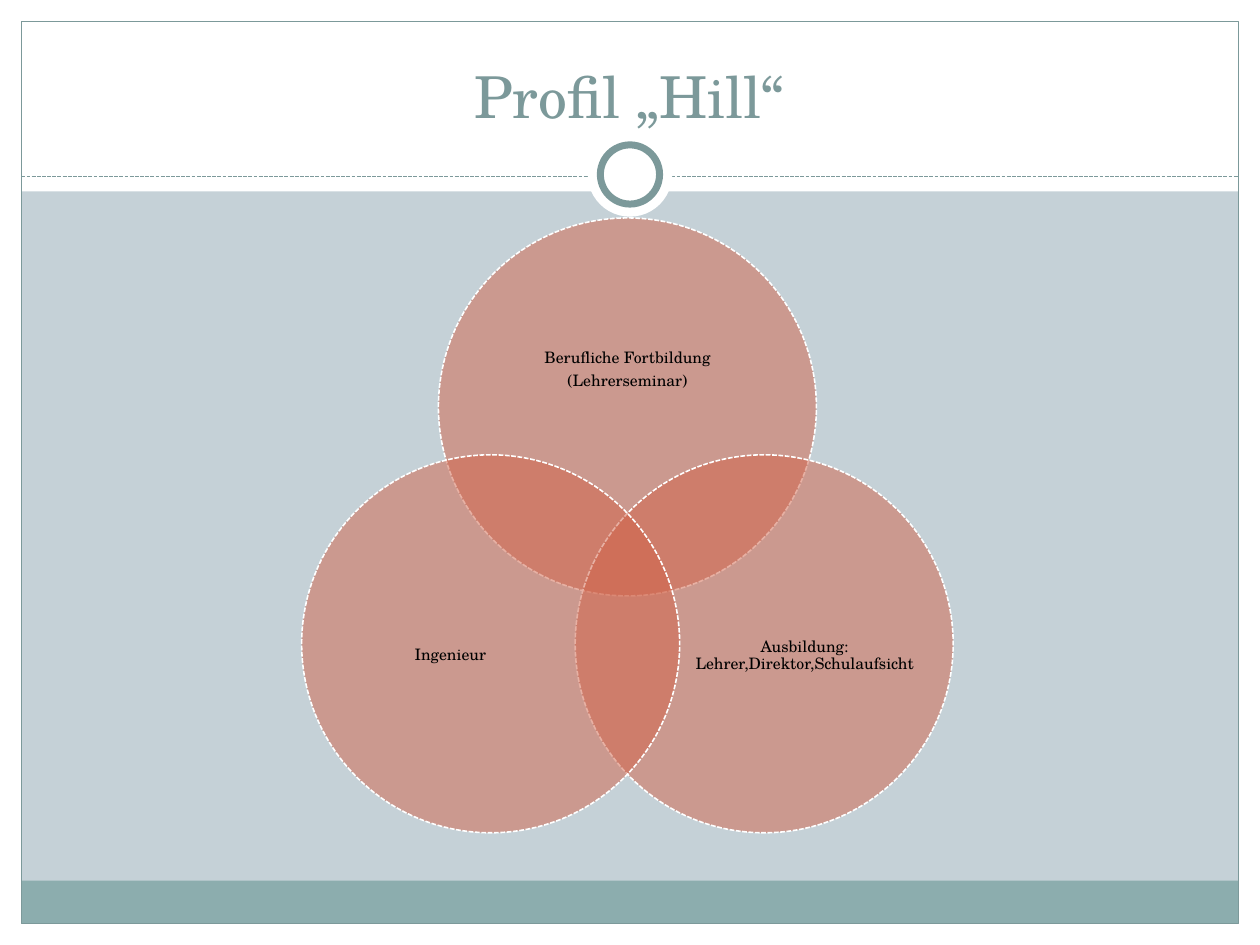
from dataclasses import dataclass
from math import cos, radians, sin

from lxml.etree import SubElement
from pptx import Presentation
from pptx.dml.color import RGBColor
from pptx.enum.dml import MSO_LINE
from pptx.enum.shapes import MSO_CONNECTOR, MSO_SHAPE
from pptx.enum.text import MSO_ANCHOR, PP_ALIGN
from pptx.oxml.ns import qn
from pptx.util import Inches, Pt


@dataclass(frozen=True)
class Theme:
    font: str = "TeX Gyre Schola"
    background: RGBColor = RGBColor(0xC5, 0xD1, 0xD7)
    white: RGBColor = RGBColor(0xFF, 0xFF, 0xFF)
    black: RGBColor = RGBColor(0x00, 0x00, 0x00)
    footer: RGBColor = RGBColor(0x8C, 0xAD, 0xAE)
    accent: RGBColor = RGBColor(0x7C, 0x99, 0x9A)
    circle: RGBColor = RGBColor(0xD1, 0x63, 0x49)
    circle_opacity: int = 50
    title_size: Pt = Pt(33)
    label_size: Pt = Pt(9)
    label_gap: Pt = Pt(3.15)
    hairline: Pt = Pt(0.75)
    circle_line: Pt = Pt(0.9)
    ring_line: Pt = Pt(4)


THEME = Theme()
SLIDE_WIDTH, SLIDE_HEIGHT = 10, 7.5
MARGIN = 0.17


def add_box(shapes, kind, box, fill=None, line=None, line_width=None):
    shape = shapes.add_shape(kind, *map(Inches, box))
    shape.shadow.inherit = False
    if fill is None:
        shape.fill.background()
    else:
        shape.fill.solid()
        shape.fill.fore_color.rgb = fill
    if line is None:
        shape.line.fill.background()
    else:
        shape.line.color.rgb = line
        shape.line.width = line_width
    return shape


def style_paragraph(paragraph, size, color):
    paragraph.alignment = PP_ALIGN.CENTER
    paragraph.font.name = THEME.font
    paragraph.font.size = size
    paragraph.font.color.rgb = color


def add_frame(shapes, box, header_height, footer_height):
    left, top, width, height = box
    right, bottom = left + width, top + height
    white_bands = [
        (left, bottom - MARGIN, width, MARGIN),
        (left, top, width, header_height),
        (left, top, MARGIN, height),
        (right - MARGIN, top, MARGIN, height),
    ]
    for band in white_bands:
        add_box(shapes, MSO_SHAPE.RECTANGLE, band, THEME.white)

    inner_width = width - 2 * MARGIN
    footer_top = bottom - MARGIN - footer_height
    add_box(shapes, MSO_SHAPE.RECTANGLE,
            (left + MARGIN, footer_top, inner_width, footer_height), THEME.footer)
    add_box(shapes, MSO_SHAPE.RECTANGLE,
            (left + MARGIN, top + MARGIN, inner_width, height - 2 * MARGIN),
            line=THEME.accent, line_width=THEME.hairline)


def add_divider(shapes, box):
    left, top, width, height = box
    line_top = top + 0.35
    divider = shapes.add_connector(
        MSO_CONNECTOR.STRAIGHT, Inches(left), Inches(line_top),
        Inches(left + width), Inches(line_top))
    divider.line.color.rgb = THEME.accent
    divider.line.width = THEME.hairline
    divider.line.dash_style = MSO_LINE.SQUARE_DOT
    SubElement(divider.element.spPr, qn("a:effectLst"))

    disc_left = left + (width - height) / 2
    inset = 0.1
    ring_size = height - 2 * inset
    add_box(shapes, MSO_SHAPE.OVAL, (disc_left, top, height, height), THEME.white)
    add_box(shapes, MSO_SHAPE.OVAL,
            (disc_left + inset, top + inset, ring_size, ring_size),
            THEME.white, THEME.accent, THEME.ring_line)


def place_title(title, box, text):
    title.left, title.top, title.width, title.height = map(Inches, box)
    title.text_frame.text = text
    title.text_frame.vertical_anchor = MSO_ANCHOR.BOTTOM
    style_paragraph(title.text_frame.paragraphs[0], THEME.title_size, THEME.accent)
    title.element.getparent().append(title.element)


def add_circle(shapes, box):
    circle = add_box(shapes, MSO_SHAPE.OVAL, box, THEME.circle,
                     THEME.white, THEME.circle_line)
    circle.line.dash_style = MSO_LINE.SQUARE_DOT
    color = circle.element.spPr.find(qn("a:solidFill")).find(qn("a:srgbClr"))
    SubElement(color, qn("a:alpha"), val=str(THEME.circle_opacity * 1000))


def add_label(shapes, box, lines):
    frame = shapes.add_textbox(*map(Inches, box)).text_frame
    frame.word_wrap = True
    frame.vertical_anchor = MSO_ANCHOR.MIDDLE
    frame.margin_left = frame.margin_right = 0
    frame.margin_top = frame.margin_bottom = 0
    frame.text = "\n".join(lines)
    for paragraph in frame.paragraphs:
        style_paragraph(paragraph, THEME.label_size, THEME.black)
        paragraph.line_spacing = 0.9
        paragraph.space_after = THEME.label_gap


def add_venn(shapes, box, circles):
    left, top, width, height = box
    diameter = 3
    orbit = (height - diameter) / 1.5
    center_x = left + width / 2
    center_y = top + diameter / 2 + orbit
    group = shapes.add_group_shape()
    for index, (lines, label_box) in enumerate(circles):
        angle = radians(-90 + index * 360 / len(circles))
        circle_left = center_x + orbit * cos(angle) - diameter / 2
        circle_top = center_y + orbit * sin(angle) - diameter / 2
        add_circle(group.shapes, (circle_left, circle_top, diameter, diameter))
        offset_x, offset_y, label_width, label_height = label_box
        add_label(group.shapes,
                  (circle_left + offset_x, circle_top + offset_y,
                   label_width, label_height), lines)


def main():
    presentation = Presentation()
    presentation.slide_width = Inches(SLIDE_WIDTH)
    presentation.slide_height = Inches(SLIDE_HEIGHT)
    slide = presentation.slides.add_slide(presentation.slide_layouts[5])
    slide.background.fill.solid()
    slide.background.fill.fore_color.rgb = THEME.background

    add_frame(slide.shapes, (0, 0, SLIDE_WIDTH, SLIDE_HEIGHT), 1.52, 0.34)
    add_divider(slide.shapes, (MARGIN, 1.05, SLIDE_WIDTH - 2 * MARGIN, 0.67))
    place_title(slide.shapes.title, (0.33, 0.25, 9.33, 0.83), "Profil „Hill“")
    add_venn(slide.shapes, (2.4, 1.73, 5.16, 4.88), [
        (["Berufliche Fortbildung", "(Lehrerseminar)"], (0.4, 0.53, 2.2, 1.35)),
        (["Ausbildung: Lehrer,Direktor,Schulaufsicht"], (0.92, 0.77, 1.8, 1.65)),
        (["Ingenieur"], (0.28, 0.77, 1.8, 1.65)),
    ])
    presentation.save("out.pptx")


if __name__ == "__main__":
    main()
